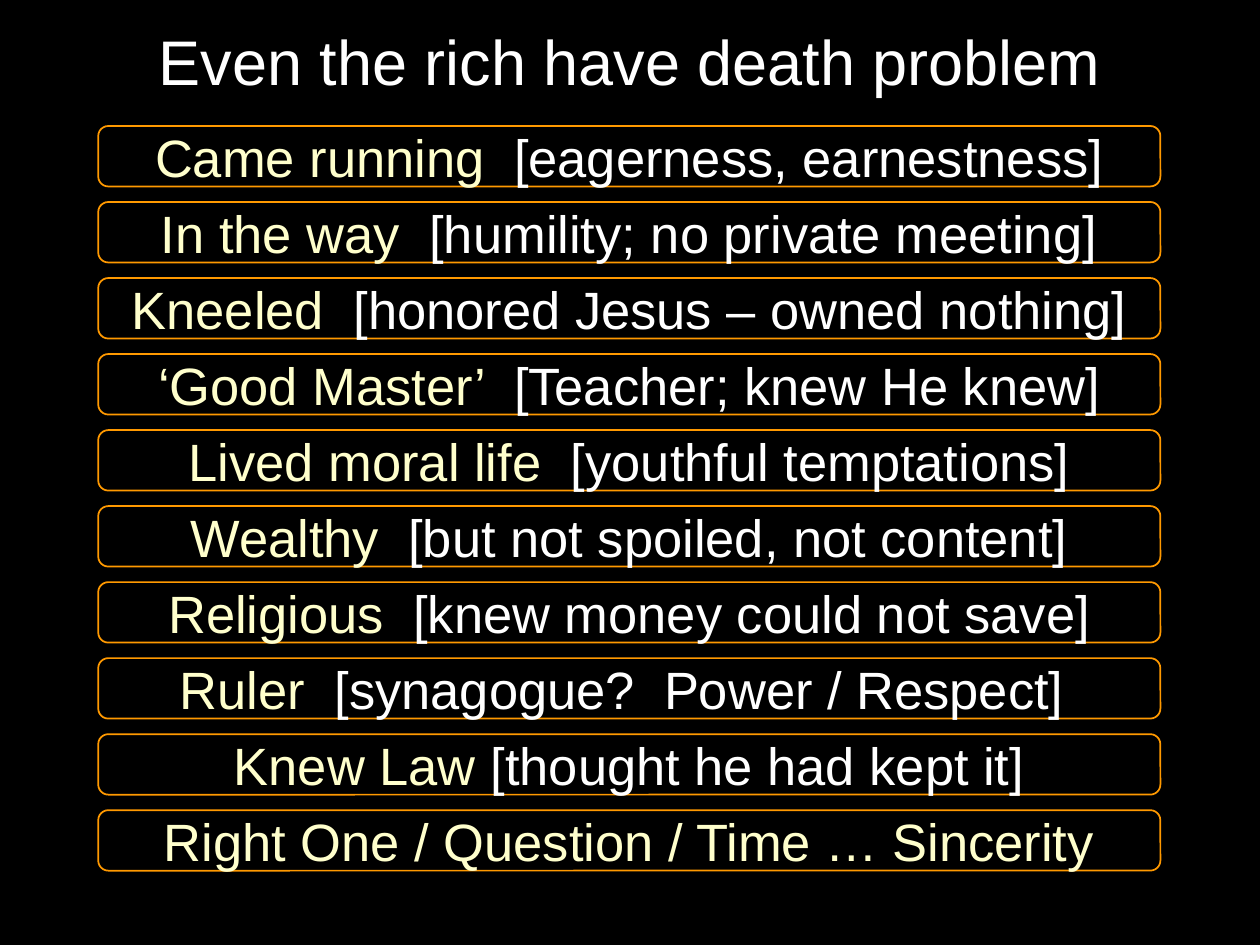
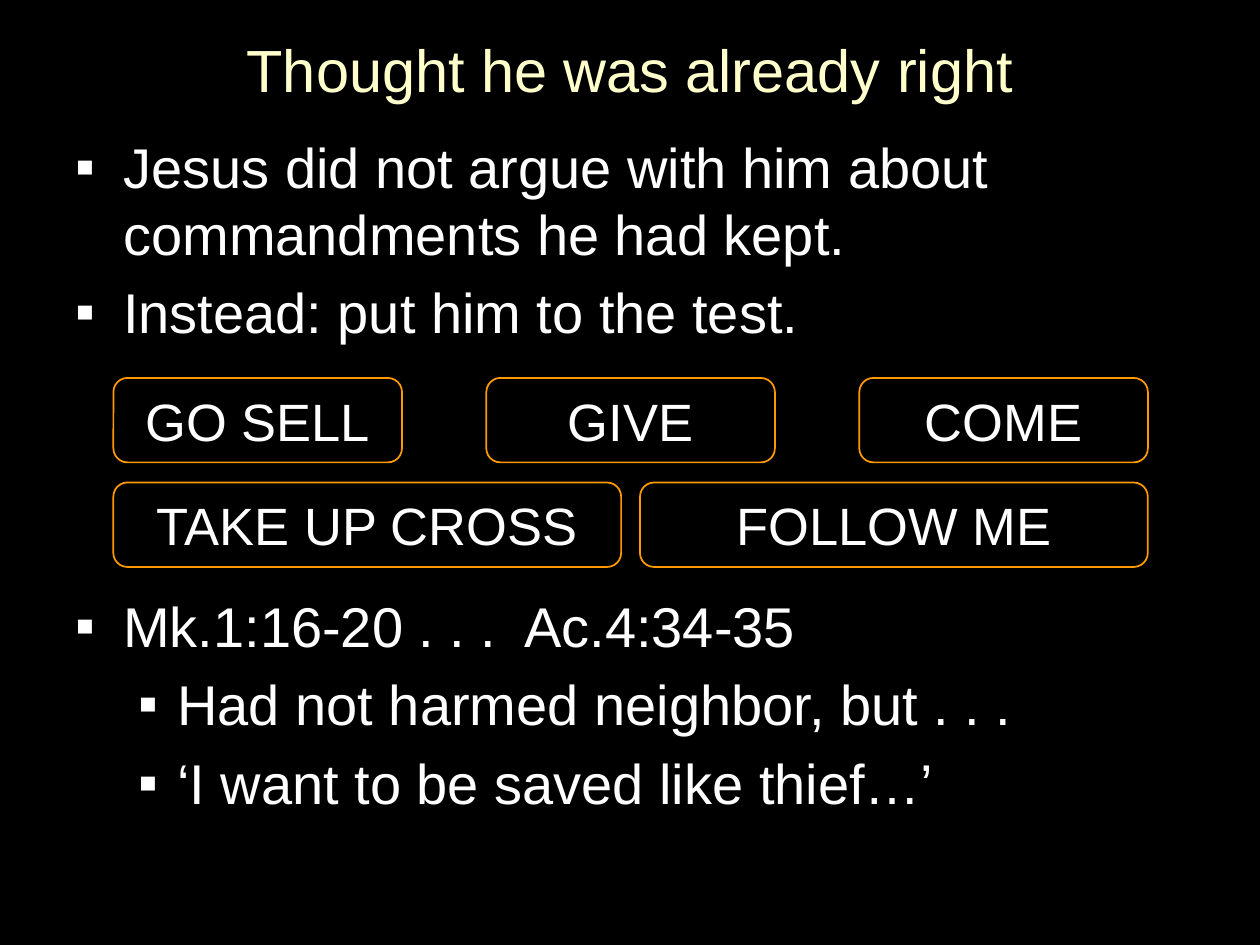
from lxml.etree import SubElement
from pptx import Presentation
from pptx.dml.color import RGBColor
from pptx.enum.shapes import MSO_SHAPE
from pptx.enum.text import MSO_ANCHOR, PP_ALIGN
from pptx.oxml.ns import qn
from pptx.util import Inches, Pt

COLORS = {"black": "000000", "white": "FFFFFF", "cream": "FFFFCC", "orange": "FF9900"}
FONT = "Arial"
LINE_HEIGHT = 1.2  # line pitch as a multiple of the font size
BOX_SIZE = 30
BULLET_SIZE = 32
BULLET_GAP = 0.2 * BULLET_SIZE
BULLET_PITCH = LINE_HEIGHT * BULLET_SIZE + BULLET_GAP

# Each trait: what he did, then the remark on it
TRAITS = [
    ("Came running  ", "[eagerness, earnestness]"),
    ("In the way  ", "[humility; no private meeting]"),
    ("Kneeled  ", "[honored Jesus – owned nothing]"),
    ("‘Good Master’  ", "[Teacher; knew He knew]"),
    ("Lived moral life  ", "[youthful temptations]"),
    ("Wealthy  ", "[but not spoiled, not content]"),
    ("Religious  ", "[knew money could not save]"),
    ("Ruler  ", "[synagogue?  Power / Respect] "),
    ("Knew Law ", "[thought he had kept it]"),
    ("Right One / Question / Time … Sincerity", ""),
]

# Each bullet: level, blank lines kept free above it, text
BULLETS = [
    (0, 0, "Jesus did not argue with him about commandments he had kept."),
    (0, 0, "Instead: put him to the test."),
    (0, 3, "Mk.1:16-20 . . .  Ac.4:34-35"),
    (1, 0, "Had not harmed neighbor, but . . ."),
    (1, 0, "‘I want to be saved like thief…’"),
]
BULLET_INDENTS = [(0.38, -0.38), (0.81, -0.31)]


def color(name):
    return RGBColor.from_string(COLORS[name])


def write(paragraph, size, parts, align=PP_ALIGN.CENTER):
    """Fill a paragraph with (text, colour name) parts of one size."""
    paragraph.alignment = align
    paragraph.line_spacing = Pt(LINE_HEIGHT * size)
    paragraph.font.name = FONT
    paragraph.font.size = Pt(size)
    for text, color_name in parts:
        if text:
            run = paragraph.add_run()
            run.text = text
            run.font.color.rgb = color(color_name)


def add_text_frame(slide, left, top, width, height):
    box = slide.shapes.add_textbox(Inches(left), Inches(top), Inches(width), Inches(height))
    box.text_frame.word_wrap = True
    return box.text_frame


def add_title(slide, text, size, color_name, *area):
    frame = add_text_frame(slide, *area)
    frame.vertical_anchor = MSO_ANCHOR.MIDDLE
    write(frame.paragraphs[0], size, [(text, color_name)])


def add_box(slide, left, top, width, height, parts):
    shape = slide.shapes.add_shape(MSO_SHAPE.ROUNDED_RECTANGLE, Inches(left),
                                   Inches(top), Inches(width), Inches(height))
    shape.shadow.inherit = False
    shape.fill.solid()
    shape.fill.fore_color.rgb = color("black")
    shape.line.color.rgb = color("orange")
    shape.line.width = Pt(1)
    shape.text_frame.vertical_anchor = MSO_ANCHOR.MIDDLE
    write(shape.text_frame.paragraphs[0], BOX_SIZE, parts)


def add_command_row(slide, top, box_width, commands):
    """Spread equal boxes between the common left and right edges."""
    left, row_width = 0.9, 8.21
    step = (row_width - box_width) / (len(commands) - 1)
    for index, command in enumerate(commands):
        add_box(slide, left + index * step, top, box_width, 0.67, [(command, "white")])


def set_bullet(paragraph, level):
    margin, indent = BULLET_INDENTS[level]
    properties = paragraph._p.get_or_add_pPr()
    properties.set("marL", str(Inches(margin)))
    properties.set("indent", str(Inches(indent)))
    SubElement(properties, qn("a:buFont")).set("typeface", FONT)
    SubElement(properties, qn("a:buChar")).set("char", "▪")
    paragraph.level = level


def add_bullets(slide, *area):
    frame = add_text_frame(slide, *area)
    for index, (level, blank_lines, text) in enumerate(BULLETS):
        paragraph = frame.add_paragraph() if index else frame.paragraphs[0]
        set_bullet(paragraph, level)
        write(paragraph, BULLET_SIZE, [(text, "white")], PP_ALIGN.LEFT)
        if index:
            paragraph.space_before = Pt(BULLET_GAP + blank_lines * BULLET_PITCH)


def add_slide(presentation):
    slide = presentation.slides.add_slide(presentation.slide_layouts[6])
    slide.background.fill.solid()
    slide.background.fill.fore_color.rgb = color("black")
    return slide


def build_traits_slide(presentation):
    slide = add_slide(presentation)
    add_title(slide, "Even the rich have death problem", 36, "white", 0.5, 0.08, 9, 0.8)
    first_top, last_top = 1, 6.43
    step = (last_top - first_top) / (len(TRAITS) - 1)
    for index, (trait, remark) in enumerate(TRAITS):
        add_box(slide, 0.78, first_top + index * step, 8.43, 0.48,
                [(trait, "cream"), (remark, "white")])


def build_test_slide(presentation):
    slide = add_slide(presentation)
    add_title(slide, "Thought he was already right", 34, "cream", 0.05, 0.17, 9.9, 0.75)
    add_bullets(slide, 0.5, 1, 9, 5.67)
    add_command_row(slide, 3, 2.29, ["GO SELL", "GIVE", "COME"])
    add_command_row(slide, 3.83, 4.03, ["TAKE UP CROSS", "FOLLOW ME"])


def main():
    presentation = Presentation()
    presentation.slide_width = Inches(10)
    presentation.slide_height = Inches(7.5)
    build_traits_slide(presentation)
    build_test_slide(presentation)
    presentation.save("out.pptx")


if __name__ == "__main__":
    main()
